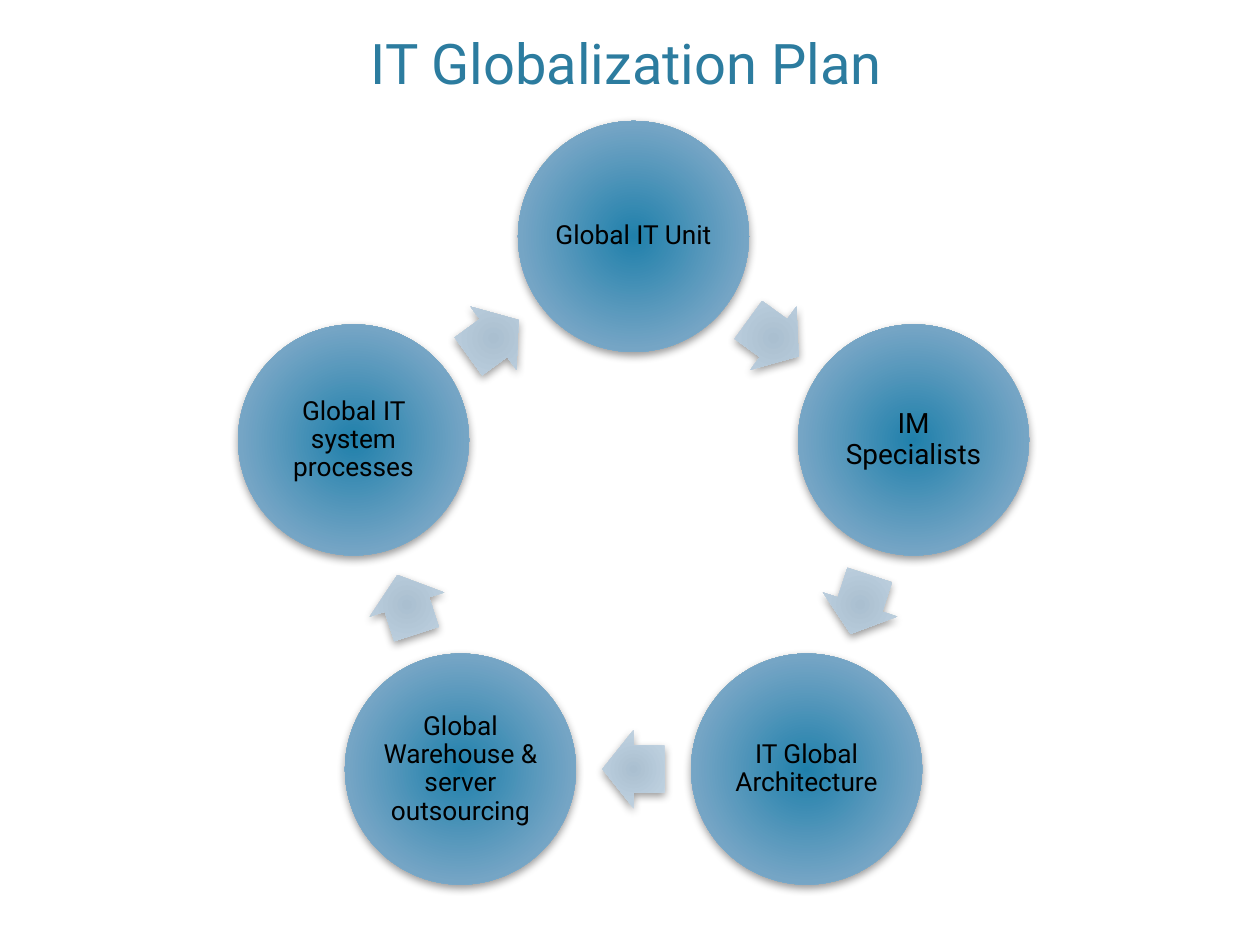
import math
from dataclasses import dataclass

from lxml import etree
from pptx import Presentation
from pptx.dml.color import RGBColor
from pptx.enum import shapes, text
from pptx.oxml.ns import qn
from pptx.util import Emu, Pt

SCALE = 914400 / 126


@dataclass(frozen=True)
class Theme:
    font: str = "Roboto"
    title_color: str = "2C7C9F"
    text_color: str = "000000"
    title_size: int = 32
    label_size: int = 15
    large_label_size: int = 16
    node_stops: tuple = ((0, "2080AB"), (69, "75A5C5"), (100, "B8CCDC"))
    arrow_stops: tuple = ((0, "AABFD0"), (69, "BCCFDE"), (100, "D8E2EB"))


THEME = Theme()
STEPS = [
    ("Global IT Unit", THEME.label_size),
    ("IM Specialists", THEME.large_label_size),
    ("IT Global Architecture", THEME.label_size),
    ("Global Warehouse & server outsourcing", THEME.label_size),
    ("Global IT system processes", THEME.label_size),
]


def px(n):
    return Emu(round(n * SCALE))


def child(parent, tag, **attrs):
    values = {key: str(value) for key, value in attrs.items()}
    return etree.SubElement(parent, qn(tag), values)


def style_text(p, size, color):
    p.alignment = text.PP_ALIGN.CENTER
    p.font.name = THEME.font
    p.font.size = Pt(size)
    p.font.color.rgb = RGBColor.from_string(color)


def radial_fill(sp, stops):
    sp.fill.gradient()
    grad = sp.element.spPr.find(qn("a:gradFill"))
    for old in list(grad):
        grad.remove(old)
    gs_list = child(grad, "a:gsLst")
    for pos, color in stops:
        gs = child(gs_list, "a:gs", pos=pos * 1000)
        child(gs, "a:srgbClr", val=color)
    path = child(grad, "a:path", path="circle")
    child(path, "a:fillToRect", l=100000, t=100000, r=100000, b=100000)


def soft_shadow(sp):
    sp.shadow.inherit = False
    effects = sp.element.spPr.find(qn("a:effectLst"))
    shadow = child(effects, "a:outerShdw", blurRad=Pt(5), dist=Pt(2),
                   dir=90 * 60000, rotWithShape=0)
    color = child(shadow, "a:srgbClr", val="000000")
    child(color, "a:alpha", val=40000)


def add_centred(s, kind, centre, width, height, stops):
    x, y = centre
    sp = s.shapes.add_shape(kind, px(x - width / 2), px(y - height / 2),
                            px(width), px(height))
    radial_fill(sp, stops)
    sp.line.fill.background()
    soft_shadow(sp)
    return sp


def add_node(s, centre, diameter, label, size):
    sp = add_centred(s, shapes.MSO_SHAPE.OVAL, centre, diameter, diameter,
                     THEME.node_stops)
    tf = sp.text_frame
    tf.word_wrap = True
    tf.vertical_anchor = text.MSO_ANCHOR.MIDDLE
    tf.margin_left = tf.margin_right = tf.margin_top = tf.margin_bottom = px(2)
    p = tf.paragraphs[0]
    p.text = label
    p.line_spacing = 0.9
    style_text(p, size, THEME.text_color)


def add_arrow(s, centre, rotation):
    sp = add_centred(s, shapes.MSO_SHAPE.RIGHT_ARROW, centre, 62, 78,
                     THEME.arrow_stops)
    sp.adjustments[0] = 0.6
    sp.adjustments[1] = 0.5
    sp.rotation = rotation


def add_title(s, left, top, width, height):
    title = s.shapes.title
    title.left, title.top = px(left), px(top)
    title.width, title.height = px(width), px(height)
    tf = title.text_frame
    tf.auto_size = text.MSO_AUTO_SIZE.NONE
    tf.vertical_anchor = text.MSO_ANCHOR.BOTTOM
    p = tf.paragraphs[0]
    p.text = "IT Globalization Plan"
    style_text(p, THEME.title_size, THEME.title_color)


def add_cycle(s, left, top, width, steps, diameter):
    turn = 360 / len(steps)
    radius = (width - diameter) / 2 / math.sin(math.radians(turn))
    cx, cy = left + width / 2, top + diameter / 2 + radius

    def polar(angle, distance):
        a = math.radians(angle)
        return cx + distance * math.sin(a), cy - distance * math.cos(a)

    arrow_radius = radius * math.cos(math.radians(turn / 2))
    for i, (label, size) in enumerate(steps):
        angle = (i + 0.5) * turn
        add_node(s, polar(i * turn, radius), diameter, label, size)
        add_arrow(s, polar(angle, arrow_radius), angle)


def main():
    prs = Presentation()
    prs.slide_width, prs.slide_height = px(1260), px(945)
    s = prs.slides.add_slide(prs.slide_layouts[5])
    add_title(s, 23, 15, 1207, 87)
    add_cycle(s, 238, 121, 791, STEPS, 231)
    prs.save("out.pptx")


if __name__ == "__main__":
    main()
